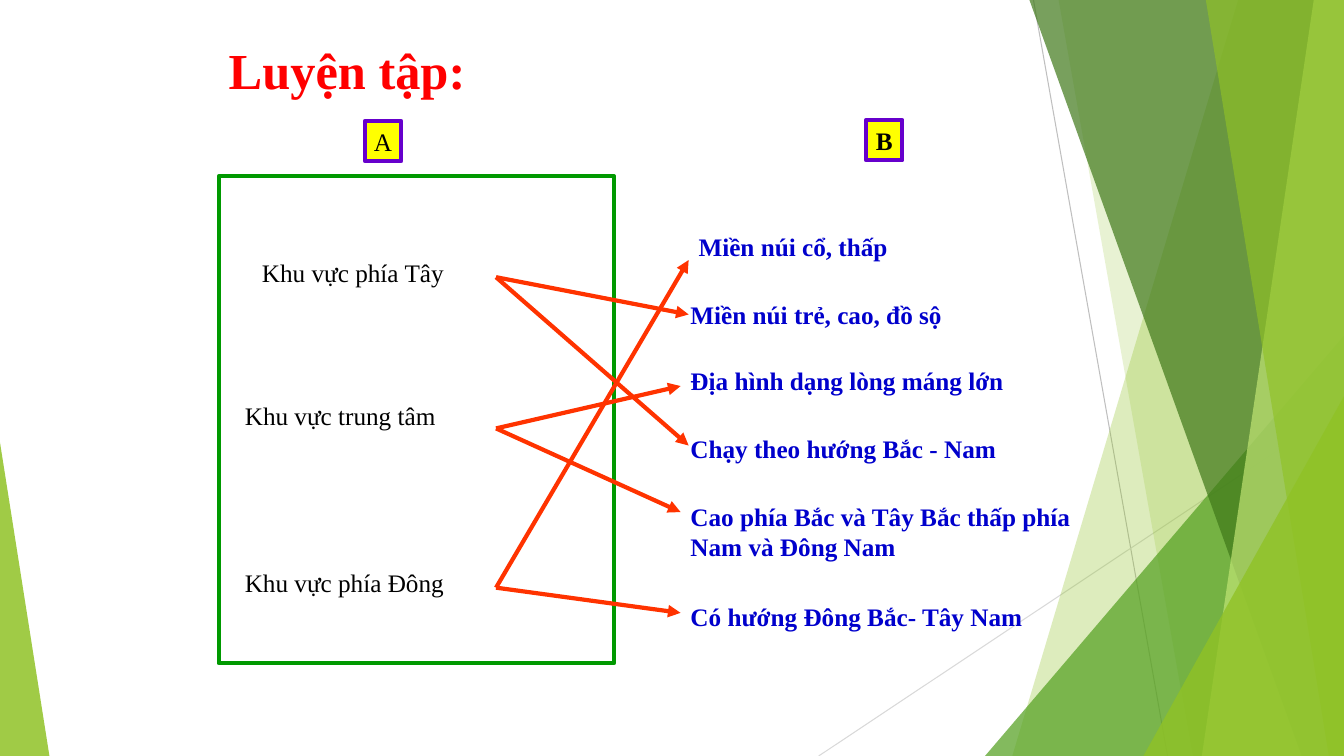
from typing import NamedTuple

from lxml import etree
from pptx import Presentation
from pptx.dml.color import RGBColor
from pptx.enum.shapes import MSO_CONNECTOR, MSO_SHAPE
from pptx.enum.text import MSO_ANCHOR
from pptx.oxml.ns import qn
from pptx.util import Inches, Pt

STRAIGHT = MSO_CONNECTOR.STRAIGHT
RECT = MSO_SHAPE.RECTANGLE
TRIANGLE = MSO_SHAPE.ISOSCELES_TRIANGLE
TOP, MIDDLE = MSO_ANCHOR.TOP, MSO_ANCHOR.MIDDLE

FONT = "Times New Roman"
W, H = 13.33, 7.5
COLORS = {
    "title": "FF0000", "region": "000000", "feature": "0000CC",
    "badge": "FFFF00", "badge_line": "6600CC", "frame": "009900",
    "arrow": "FF3300", "gray": "BFBFBF", "light_gray": "D9D9D9",
    "lime": "90C226", "green": "54A021", "dark": "3F7819", "pale": "C0E474",
}


class Band(NamedTuple):
    top_left: float
    bottom_left: float
    color: str
    alpha: int


class Wedge(NamedTuple):
    left: float
    top: float
    width: float
    apex: float
    color: str
    alpha: int


class Line(NamedTuple):
    x1: float
    y1: float
    x2: float
    y2: float
    color: str = "arrow"
    weight: float = 3
    arrow: bool = True


class Label(NamedTuple):
    text: str
    left: float
    top: float
    width: float
    height: float = 0.4


class Badge(NamedTuple):
    text: str
    left: float
    top: float
    bold: bool


RAYS = [
    Line(10.25, 0, 11.58, H, "gray", 0.75, False),
    Line(W, 4.03, 8.12, H, "light_gray", 0.75, False),
]
FACETS = [
    Band(12.28, 10.04, "lime", 30),
    Band(10.5, 11.83, "lime", 20),
    Wedge(9.77, 3.33, 3.56, 1, "green", 72),
    Band(10.21, 12.91, "dark", 70),
    Band(13.03, 11.92, "pale", 70),
    Band(11.96, 13.18, "lime", 65),
    Wedge(11.34, 3.93, 1.99, 1, "lime", 80),
    Wedge(0, 4.39, 0.49, 0, "lime", 85),
]
REGIONS = [
    Label("Khu vực phía Tây", 2.5, 2.5, 3.83),
    Label("Khu vực trung tâm", 2.33, 3.92, 2.92),
    Label("Khu vực phía Đông", 2.33, 5.58, 3.33),
]
FEATURES = [
    Label("Miền núi cổ, thấp", 6.83, 2.25, 3.6),
    Label("Miền núi trẻ, cao, đồ sộ", 6.75, 2.92, 3.83),
    Label("Địa hình dạng lòng máng lớn", 6.75, 3.58, 4.42),
    Label("Chạy theo hướng Bắc - Nam", 6.75, 4.25, 4.33),
    Label("Cao phía Bắc và Tây Bắc thấp phía Nam và Đông Nam", 6.75, 4.92, 4.33, 0.7),
    Label("Có hướng Đông Bắc- Tây Nam", 6.75, 5.92, 4.75),
]
BADGES = [Badge("A", 3.62, 1.2, False), Badge("B", 8.59, 1.19, True)]
MATCHES = {
    2.75: [(6.83, 3.12), (6.83, 4.42)],
    4.25: [(6.75, 3.83), (6.75, 5.08)],
    5.83: [(6.83, 2.58), (6.75, 6.08)],
}


def rgb(name: str) -> RGBColor:
    return RGBColor.from_string(COLORS[name])


def write(sp, text: str, *, color: str, size: float = 18, bold: bool = False,
          wrap: bool = True, anchor=TOP) -> None:
    tf = sp.text_frame
    tf.word_wrap = wrap
    tf.vertical_anchor = anchor
    p = tf.paragraphs[0]
    r = p.add_run()
    r.text = text
    r.font.name = FONT
    r.font.size = Pt(size)
    r.font.bold = bold
    r.font.color.rgb = rgb(color)


def add_label(s, label: Label, **fmt) -> None:
    box = (label.left, label.top, label.width, label.height)
    write(s.shapes.add_textbox(*map(Inches, box)), label.text, **fmt)


def add_facet(s, facet: Band | Wedge) -> None:
    if isinstance(facet, Band):
        corners = [(W, 0), (W, H), (facet.bottom_left, H)]
        fb = s.shapes.build_freeform(Inches(facet.top_left), 0)
        fb.add_line_segments([(Inches(x), Inches(y)) for x, y in corners])
        sp = fb.convert_to_shape()
    else:
        sp = s.shapes.add_shape(TRIANGLE, Inches(facet.left), Inches(facet.top),
                                Inches(facet.width), Inches(H - facet.top))
        sp.adjustments[0] = facet.apex
    sp.shadow.inherit = False
    sp.line.fill.background()
    sp.fill.solid()
    sp.fill.fore_color.rgb = rgb(facet.color)
    clr = sp.fill._xPr.find(f".//{qn('a:srgbClr')}")
    etree.SubElement(clr, qn("a:alpha"), val=str(facet.alpha * 1000))


def add_line(s, line: Line) -> None:
    ends = (line.x1, line.y1, line.x2, line.y2)
    c = s.shapes.add_connector(STRAIGHT, *map(Inches, ends))
    c.line.color.rgb = rgb(line.color)
    c.line.width = Pt(line.weight)
    if line.arrow:
        etree.SubElement(c.line._get_or_add_ln(), qn("a:tailEnd"), type="triangle")
    etree.SubElement(c._element.spPr, qn("a:effectLst"))


def add_rect(s, left: float, top: float, width: float, height: float,
             line: str, fill: str | None = None):
    sp = s.shapes.add_shape(RECT, *map(Inches, (left, top, width, height)))
    sp.shadow.inherit = False
    sp.line.color.rgb = rgb(line)
    sp.line.width = Pt(3)
    if fill:
        sp.fill.solid()
        sp.fill.fore_color.rgb = rgb(fill)
    else:
        sp.fill.background()
    return sp


def main() -> None:
    prs = Presentation()
    prs.slide_width, prs.slide_height = Inches(W), Inches(H)
    s = prs.slides.add_slide(prs.slide_layouts[6])
    for ray in RAYS:
        add_line(s, ray)
    for facet in FACETS:
        add_facet(s, facet)
    add_label(s, Label("Luyện tập:", 2.17, 0.3, 4.92, 0.77),
              color="title", size=36, bold=True, anchor=MIDDLE)
    for region in REGIONS:
        add_label(s, region, color="region")
    for feature in FEATURES:
        add_label(s, feature, color="feature", bold=True)
    for badge in BADGES:
        sp = add_rect(s, badge.left, badge.top, 0.36, 0.4, "badge_line", "badge")
        write(sp, badge.text, color="region", bold=badge.bold, wrap=False)
    add_rect(s, 2.17, 1.75, 3.92, 4.83, "frame")
    for y, targets in MATCHES.items():
        for target in targets:
            add_line(s, Line(4.92, y, *target))
    prs.save("out.pptx")


if __name__ == "__main__":
    main()
